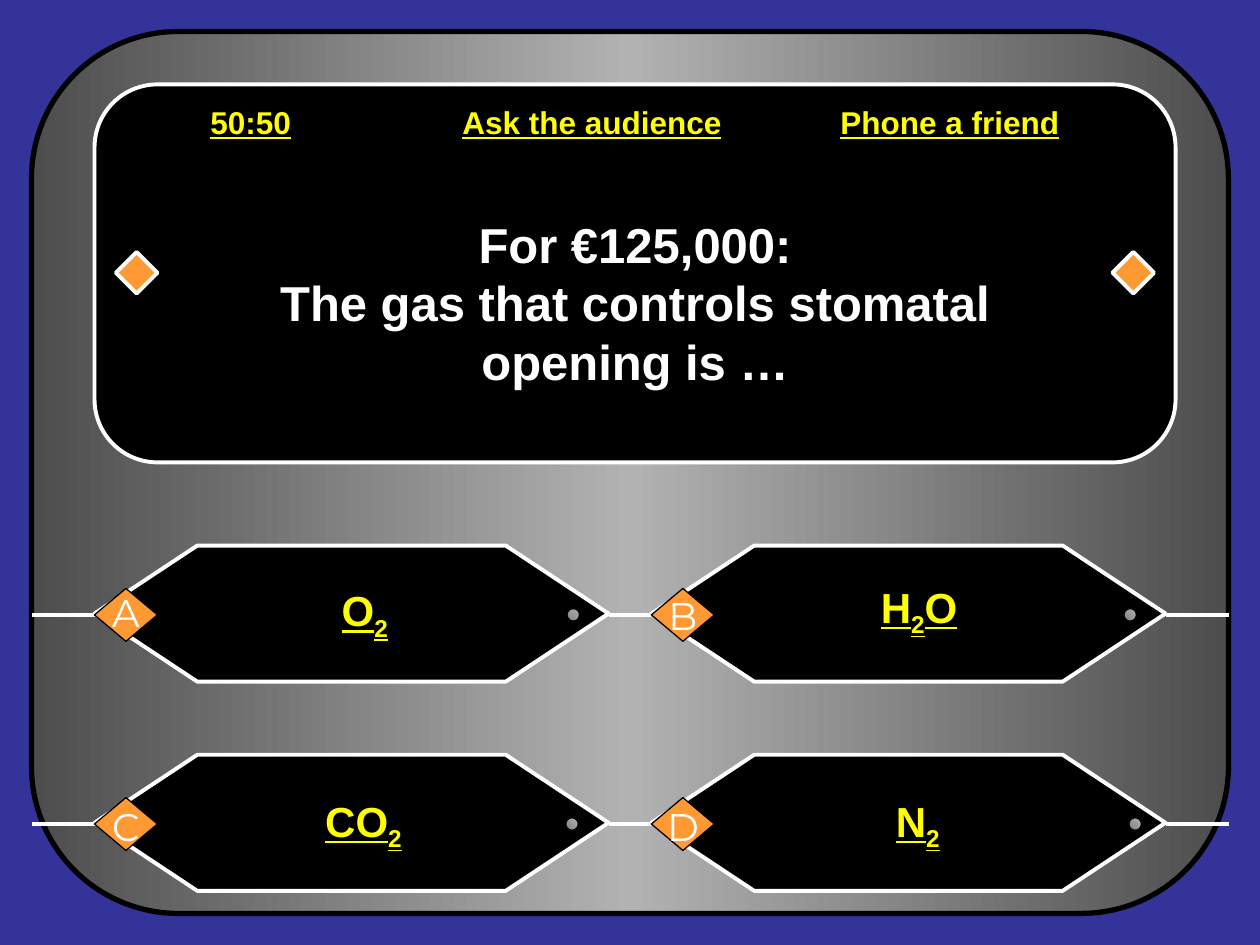
"""Build a quiz-show question slide with four lettered answers."""
from copy import deepcopy
from dataclasses import dataclass

from lxml.etree import SubElement
from pptx import Presentation
from pptx.dml.color import RGBColor
from pptx.enum.shapes import MSO_CONNECTOR as Connector, MSO_SHAPE as Preset
from pptx.enum.text import MSO_ANCHOR as Anchor, MSO_AUTO_SIZE as AutoSize, PP_ALIGN as Align
from pptx.oxml.ns import qn
from pptx.util import Inches, Pt

BLACK, WHITE, ORANGE, YELLOW = "000000", "FFFFFF", "FF9933", "FFFF00"
LINK = {"name": "Arial", "bold": True, "underline": True}
QUESTION = {"name": "Arial", "size": Pt(28), "bold": True}
LETTER = {"name": "Montserrat", "size": Pt(22)}
FRAME = {"vertical_anchor": Anchor.MIDDLE, "word_wrap": False, "auto_size": AutoSize.NONE}


@dataclass(frozen=True)
class Box:
    left: float
    top: float
    width: float
    height: float

    def lengths(self) -> list:
        return [Inches(v) for v in (self.left, self.top, self.width, self.height)]


@dataclass(frozen=True)
class Answer:
    letter: str
    formula: tuple
    left: float
    top: float
    label_left: float
    label_top: float
    letter_top: float
    dot_left: float


ANSWERS = (
    Answer("A", ("O", "2"), 0.75, 4.33, 1.23, 4.38, 4.62, 4.5),
    Answer("B", ("H", "2", "O"), 5.17, 4.33, 5.63, 4.35, 4.65, 8.92),
    Answer("C", ("CO", "2"), 0.75, 5.99, 1.22, 6.05, 6.32, 4.49),
    Answer("D", ("N", "2"), 5.17, 5.99, 5.62, 6.05, 6.32, 8.96),
)
LIFELINES = ("50:50", "Ask the audience", "Phone a friend")
LIFELINE_TABS = (2, 5)
QUESTION_LINES = ("For €125,000:", "The gas that controls stomatal", "opening is …")


def rgb(color: str) -> RGBColor:
    return RGBColor.from_string(color)


def apply(target, values: dict) -> None:
    for name, value in values.items():
        setattr(target, name, value)


def paint(fill, colors: tuple, angle: float) -> None:
    if len(colors) == 1:
        fill.solid()
        fill.fore_color.rgb = rgb(colors[0])
        return
    fill.gradient()
    fill.gradient_angle = angle
    first = fill.gradient_stops[0]._gs
    for _ in colors[2:]:
        first.addnext(deepcopy(first))
    for i, (stop, color) in enumerate(zip(fill.gradient_stops, colors)):
        stop.color.rgb = rgb(color)
        stop.position = i / (len(colors) - 1)


def draw(slide, preset, box: Box, colors: tuple = (), edge: str = "",
         weight: float = 0.75, angle: float = 0):
    shape = slide.shapes.add_shape(preset, *box.lengths())
    shape.shadow.inherit = False
    if colors:
        paint(shape.fill, colors, angle)
    else:
        shape.fill.background()
    if edge:
        shape.line.color.rgb = rgb(edge)
        shape.line.width = Pt(weight)
    else:
        shape.line.fill.background()
    return shape


def draw_wire(slide, start: float, end: float, y: float) -> None:
    wire = slide.shapes.add_connector(
        Connector.STRAIGHT, Inches(start), Inches(y), Inches(end), Inches(y))
    wire.line.color.rgb = rgb(WHITE)
    wire.line.width = Pt(2.25)
    SubElement(wire._element.spPr, qn("a:effectLst"))


def write(paragraph, text: str, color: str, style: dict):
    run = paragraph.add_run()
    run.text = text
    apply(run.font, style)
    run.font.color.rgb = rgb(color)
    return run


def draw_question(slide) -> None:
    draw(slide, Preset.FLOWCHART_ALTERNATE_PROCESS, Box(0.75, 0.67, 8.58, 3),
         (BLACK,), WHITE, 2.25)
    for left in (0.92, 8.83):
        draw(slide, Preset.DIAMOND, Box(left, 2, 0.33, 0.33), (ORANGE,), WHITE, 2.25)
    title = slide.shapes.title
    slide.shapes._spTree.append(title._element)
    apply(title, dict(zip(("left", "top", "width", "height"),
                          Box(0.75, 1.6, 8.58, 1.6).lengths())))
    apply(title.text_frame, FRAME)
    for i, line in enumerate(QUESTION_LINES):
        paragraph = title.text_frame.add_paragraph() if i else title.text_frame.paragraphs[0]
        paragraph.alignment = Align.CENTER
        write(paragraph, line, WHITE, QUESTION)


def draw_lifelines(slide) -> None:
    frame = slide.shapes.add_textbox(*Box(0.79, 0.69, 8.48, 0.56).lengths()).text_frame
    apply(frame, FRAME | {"word_wrap": True, "margin_left": Inches(0.88)})
    paragraph = frame.paragraphs[0]
    paragraph.alignment = Align.LEFT
    stops = SubElement(paragraph._p.get_or_add_pPr(), qn("a:tabLst"))
    for position in LIFELINE_TABS:
        SubElement(stops, qn("a:tab"), pos=str(Inches(position)), algn="l")
    for i, lifeline in enumerate(LIFELINES):
        if i:
            write(paragraph, "\t", WHITE, {"size": Pt(18)})
        write(paragraph, lifeline, YELLOW, LINK | {"size": Pt(18)})


def draw_answer(slide, answer: Answer) -> None:
    draw(slide, Preset.FLOWCHART_PREPARATION, Box(answer.left, answer.top, 4.08, 1.08),
         (BLACK,), WHITE, 2.25)
    draw(slide, Preset.DIAMOND, Box(answer.left, answer.top + 0.34, 0.5, 0.42),
         (ORANGE,), BLACK)
    draw(slide, Preset.FLOWCHART_CONNECTOR, Box(answer.dot_left, answer.top + 0.5, 0.1, 0.1),
         ("808080", "B2B2B2"), BLACK, angle=45)
    badge = slide.shapes.add_textbox(
        *Box(answer.left + 0.01, answer.letter_top, 0.48, 0.47).lengths()).text_frame
    apply(badge, FRAME | {"word_wrap": True})
    badge.paragraphs[0].alignment = Align.CENTER
    write(badge.paragraphs[0], answer.letter, WHITE, LETTER)
    label = draw(slide, Preset.ACTION_BUTTON_CUSTOM,
                 Box(answer.label_left, answer.label_top, 3.33, 0.98)).text_frame
    apply(label, FRAME)
    label.paragraphs[0].alignment = Align.CENTER
    for part in answer.formula:
        run = write(label.paragraphs[0], part, YELLOW, LINK | {"size": Pt(24)})
        if part.isdigit():
            run._r.get_or_add_rPr().set("baseline", "-25000")


def main() -> None:
    deck = Presentation()
    apply(deck, {"slide_width": Inches(10), "slide_height": Inches(7.5)})
    slide = deck.slides.add_slide(deck.slide_layouts[5])
    paint(slide.background.fill, ("333399",), 0)
    draw(slide, Preset.FLOWCHART_ALTERNATE_PROCESS, Box(0.25, 0.25, 9.5, 7),
         ("4D4D4D", "B2B2B2", "4D4D4D"), BLACK, 3)
    draw_question(slide)
    draw_lifelines(slide)
    for y in (4.88, 6.54):
        for start, end in ((0.25, 0.75), (4.83, 5.17), (9.25, 9.75)):
            draw_wire(slide, start, end, y)
    for answer in ANSWERS:
        draw_answer(slide, answer)
    deck.save("out.pptx")


if __name__ == "__main__":
    main()
